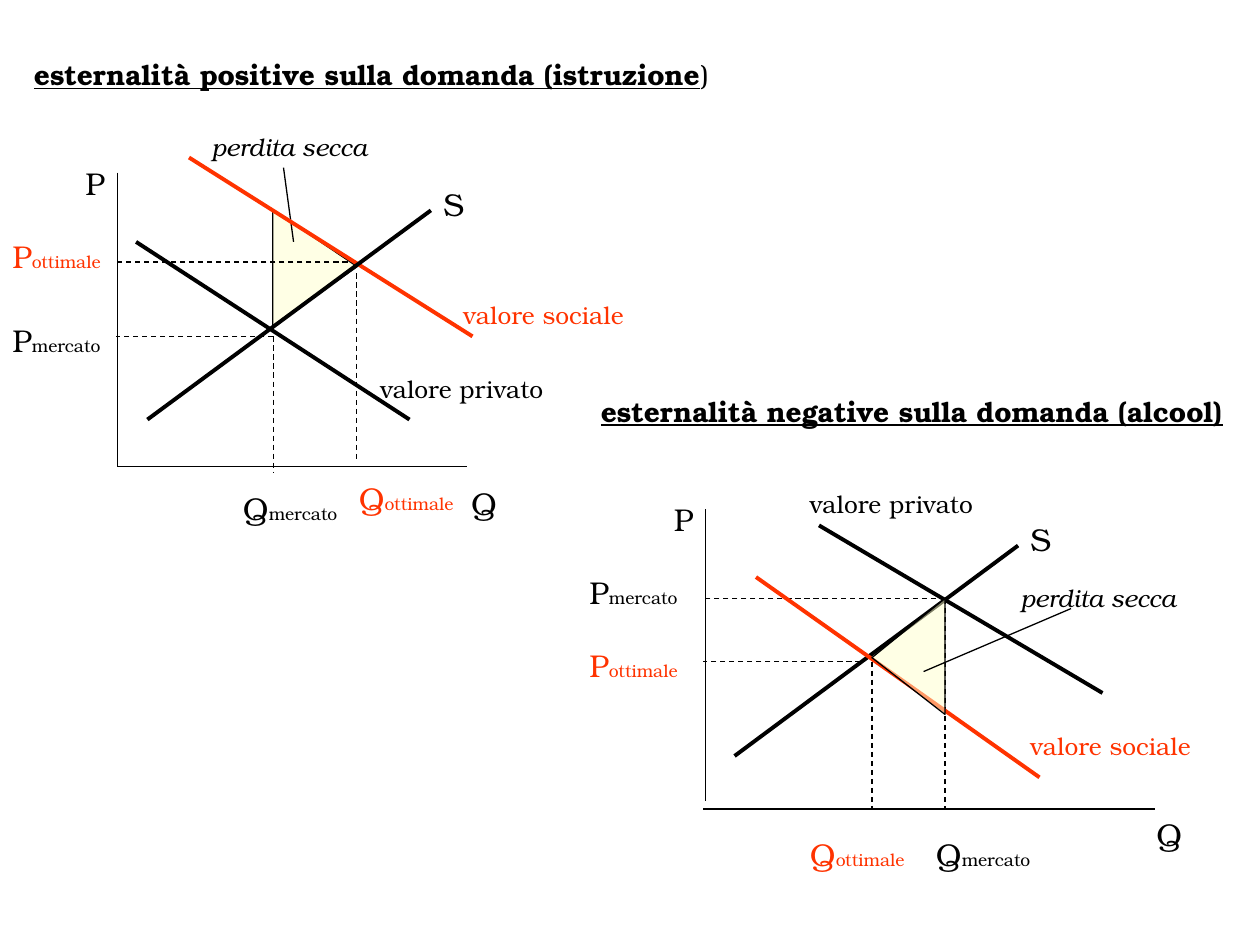
from dataclasses import dataclass

from lxml.etree import SubElement
from pptx import Presentation
from pptx.dml.color import RGBColor
from pptx.enum.dml import MSO_LINE
from pptx.enum.shapes import MSO_CONNECTOR, MSO_SHAPE
from pptx.enum.text import MSO_AUTO_SIZE
from pptx.oxml.ns import qn
from pptx.util import Inches, Pt

FONT = "TeX Gyre Bonum"
COLORS = {"black": "000000", "red": "FF3300", "yellow": "FFFFCC"}
TEXT_STYLES = {
    "title": {"size": Pt(16), "bold": True, "underline": True},
    "title_end": {"size": Pt(16)},
    "symbol": {"size": Pt(18)},
    "subscript": {"size": Pt(10)},
    "curve": {"size": Pt(14)},
    "loss": {"size": Pt(14), "italic": True},
}
BOX_HEIGHTS = {"title": 0.37, "symbol": 0.4, "curve": 0.34, "loss": 0.33}
LINE_STYLES = {
    "thin": {"width": Pt(0.75)},
    "guide": {"width": Pt(0.75), "dash_style": MSO_LINE.DASH},
    "curve": {"width": Pt(2.25)},
}


@dataclass
class Label:
    text: str
    left: float
    top: float
    width: float
    style: str = "symbol"
    color: str = "black"
    tail: str = ""
    tail_style: str = "subscript"


@dataclass
class Segment:
    start: tuple[float, float]
    end: tuple[float, float]
    style: str = "guide"
    color: str = "black"


@dataclass
class Loss:
    """Deadweight triangle: box before rotation, and rotation in degrees."""
    left: float
    top: float
    width: float
    height: float
    rotation: int


def rgb(name: str) -> RGBColor:
    return RGBColor.from_string(COLORS[name])


def apply_format(target, values: dict) -> None:
    for name, value in values.items():
        setattr(target, name, value)


def draw_label(slide, label: Label) -> None:
    box = slide.shapes.add_textbox(
        Inches(label.left), Inches(label.top),
        Inches(label.width), Inches(BOX_HEIGHTS[label.style]))
    frame = box.text_frame
    apply_format(frame, {"word_wrap": False,
                         "auto_size": MSO_AUTO_SIZE.SHAPE_TO_FIT_TEXT})
    for text, style in ((label.text, label.style), (label.tail, label.tail_style)):
        if text:
            run = frame.paragraphs[0].add_run()
            run.text = text
            apply_format(run.font, {"name": FONT, **TEXT_STYLES[style]})
            run.font.color.rgb = rgb(label.color)


def draw_segment(slide, segment: Segment) -> None:
    connector = slide.shapes.add_connector(
        MSO_CONNECTOR.STRAIGHT,
        *(Inches(value) for value in segment.start + segment.end))
    connector.line.color.rgb = rgb(segment.color)
    apply_format(connector.line, LINE_STYLES[segment.style])
    SubElement(connector._element.spPr, qn("a:effectLst"))


def draw_loss(slide, loss: Loss) -> None:
    shape = slide.shapes.add_shape(
        MSO_SHAPE.ISOSCELES_TRIANGLE, Inches(loss.left), Inches(loss.top),
        Inches(loss.width), Inches(loss.height))
    shape.adjustments[0] = 0.49
    shape.rotation = loss.rotation
    shape.shadow.inherit = False
    shape.fill.solid()
    shape.fill.fore_color.rgb = rgb("yellow")
    color = shape._element.spPr.find(qn("a:solidFill"))[0]
    SubElement(color, qn("a:alpha"), val="50000")
    shape.line.color.rgb = rgb("black")
    shape.line.width = Pt(0.75)


DRAW = {Label: draw_label, Segment: draw_segment, Loss: draw_loss}

POSITIVE_EXTERNALITY = [
    Label("esternalità positive sulla domanda (istruzione", 0.17, 0.41, 5.58,
          "title", tail=")", tail_style="title_end"),
    Label("perdita secca", 1.58, 1, 1.44, "loss"),
    Loss(2.04, 1.79, 0.92, 0.67, 90),
    Segment((2.25, 1.33), (2.33, 1.92), "thin"),
    # Social optimum
    Segment((2.83, 2.08), (0.92, 2.08)),
    Segment((2.83, 2.17), (2.83, 3.67)),
    Label("P", 0, 1.83, 0.9, color="red", tail="ottimale"),
    Label("Q", 2.75, 3.75, 0.95, color="red", tail="ottimale"),
    Label("valore sociale", 3.58, 2.33, 1.49, "curve", "red"),
    Segment((1.5, 1.25), (3.75, 2.67), "curve", "red"),
    # Market equilibrium
    Segment((2.17, 2.67), (2.17, 3.75)),
    Segment((2.17, 2.67), (0.92, 2.67)),
    Label("P", 0, 2.5, 0.9, tail="mercato"),
    Label("Q", 1.83, 3.83, 0.95, tail="mercato"),
    Label("S", 3.42, 1.42, 0.37),
    Segment((1.17, 3.33), (3.42, 1.67), "curve"),
    Segment((1.08, 1.92), (3.25, 3.33), "curve"),
    Label("valore privato", 2.92, 2.92, 1.51, "curve"),
    # Axes
    Segment((0.93, 1.37), (0.93, 3.7), "thin"),
    Segment((0.93, 3.7), (3.71, 3.7), "thin"),
    Label("Q", 3.64, 3.79, 0.4),
    Label("P", 0.58, 1.25, 0.36),
]

NEGATIVE_EXTERNALITY = [
    Label("esternalità negative sulla domanda (alcool)", 4.67, 3.08, 5.16, "title"),
    # Market equilibrium
    Label("S", 8.08, 4.08, 0.37),
    Segment((5.83, 6), (8.08, 4.33), "curve"),
    Segment((6.5, 4.17), (8.75, 5.5), "curve"),
    Label("valore privato", 6.33, 3.83, 1.51, "curve"),
    Segment((7.5, 4.75), (7.5, 6.42)),
    Segment((7.5, 4.75), (5.58, 4.75)),
    Label("P", 4.58, 4.5, 0.9, tail="mercato"),
    Label("Q", 7.33, 6.58, 0.95, tail="mercato"),
    # Axes
    Segment((5.6, 4.04), (5.6, 6.36), "thin"),
    Segment((5.58, 6.42), (9.17, 6.42), "thin"),
    Label("Q", 9.08, 6.42, 0.4),
    Label("P", 5.25, 3.92, 0.36),
    # Social optimum
    Label("valore sociale", 8.08, 5.75, 1.49, "curve", "red"),
    Segment((6, 4.58), (8.25, 6.17), "curve", "red"),
    Segment((6.83, 5.25), (5.58, 5.25)),
    Segment((6.92, 5.25), (6.92, 6.42)),
    Label("Q", 6.33, 6.58, 0.95, color="red", tail="ottimale"),
    Label("P", 4.58, 5.08, 0.9, color="red", tail="ottimale"),
    Label("perdita secca", 8, 4.58, 1.44, "loss"),
    Loss(6.75, 4.92, 0.92, 0.58, 270),
    Segment((7.33, 5.33), (8.5, 4.83), "thin"),
]


def main() -> None:
    presentation = Presentation()
    presentation.slide_width = Inches(10)
    presentation.slide_height = Inches(7.5)
    slide = presentation.slides.add_slide(presentation.slide_layouts[6])
    for element in POSITIVE_EXTERNALITY + NEGATIVE_EXTERNALITY:
        DRAW[type(element)](slide, element)
    presentation.save("out.pptx")


if __name__ == "__main__":
    main()
